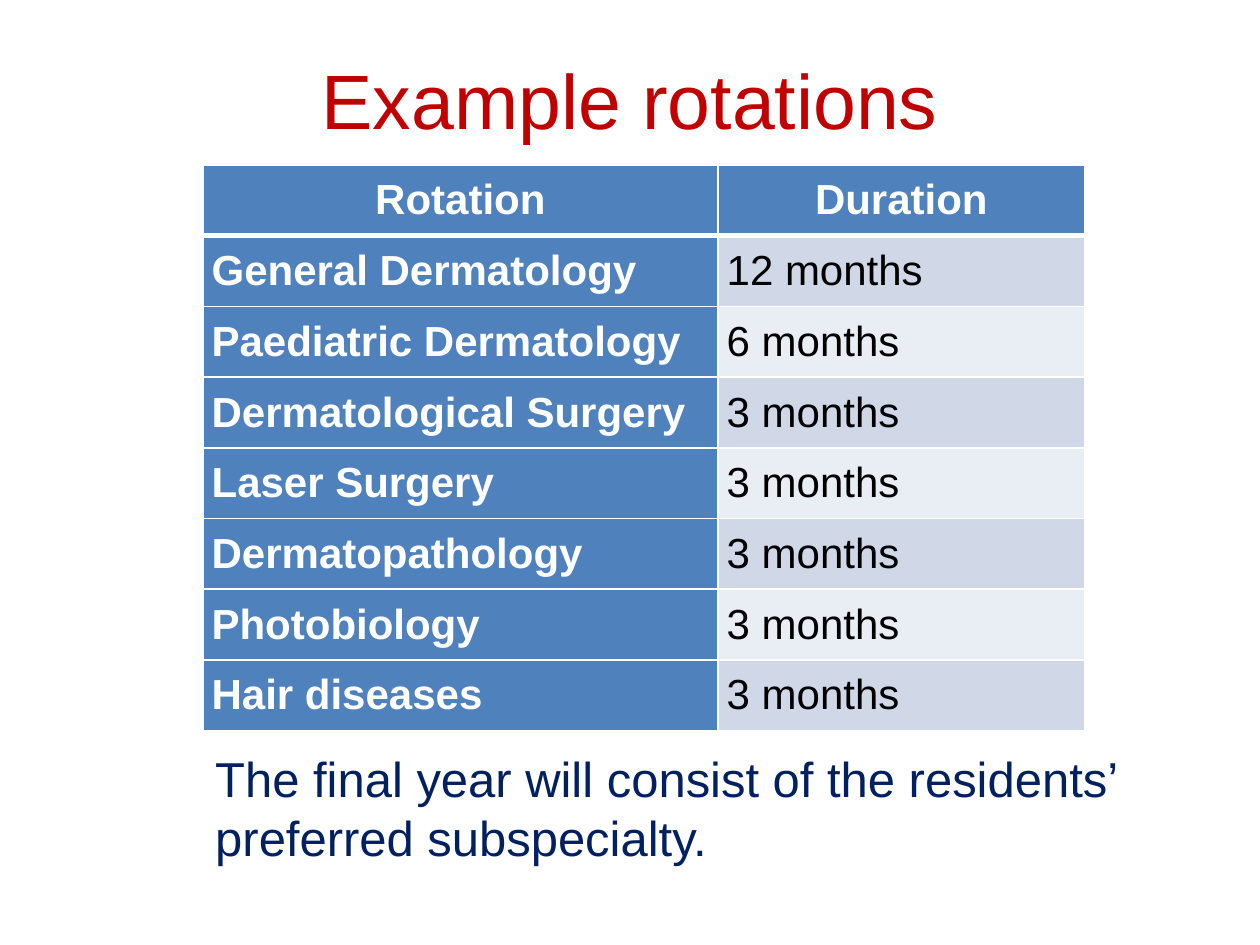
from lxml.etree import SubElement
from pptx import Presentation
from pptx.dml.color import RGBColor
from pptx.enum.text import MSO_ANCHOR as Anchor, MSO_AUTO_SIZE as AutoSize, PP_ALIGN as Align
from pptx.oxml.ns import qn
from pptx.util import Inches, Pt

WHITE = RGBColor(0xFF, 0xFF, 0xFF)
BLACK = RGBColor(0x00, 0x00, 0x00)
RED = RGBColor(0xC0, 0x00, 0x00)
NAVY = RGBColor(0x00, 0x20, 0x60)
BLUE = RGBColor(0x4F, 0x81, 0xBD)
BANDS = (RGBColor(0xD0, 0xD8, 0xE8), RGBColor(0xE9, 0xED, 0xF4))

TITLE_BOX = (0.5, 0.3, 9, 0.77)
TABLE_BOX = (1.61, 1.31, 7, 4.49)
NOTE_BOX = (1.61, 5.89, 8.19, 1.04)
COLUMN_SHARES = (0.584, 0.416)
ROTATIONS = (
    ("Rotation", "Duration"),
    ("General Dermatology", "12 months"),
    ("Paediatric Dermatology", "6 months"),
    ("Dermatological Surgery", "3 months"),
    ("Laser Surgery", "3 months"),
    ("Dermatopathology", "3 months"),
    ("Photobiology", "3 months"),
    ("Hair diseases", "3 months"),
)


def set_all(target, values):
    """Set each named attribute of the target."""
    for name, value in values.items():
        setattr(target, name, value)


def write_text(frame, text, size, color, bold=False, align=Align.LEFT):
    """Write one formatted paragraph into a text frame."""
    para = frame.paragraphs[0]
    para.alignment = align
    span = para.add_run()
    span.text = text
    set_all(span.font, {"name": "Arial", "size": Pt(size), "bold": bold})
    span.font.color.rgb = color


def set_borders(cell, widths):
    """Draw white cell borders with the given widths in points."""
    properties = cell._tc.get_or_add_tcPr()
    for side, width in widths.items():
        line = SubElement(properties, qn(f"a:ln{side}"), w=str(Pt(width)))
        fill = SubElement(line, qn("a:solidFill"))
        SubElement(fill, qn("a:srgbClr"), val=str(WHITE))


def add_title(page, box):
    """Place the slide title in its box."""
    title = page.shapes.title
    set_all(title, dict(zip(("left", "top", "width", "height"), map(Inches, box))))
    set_all(title.text_frame, {
        "vertical_anchor": Anchor.TOP, "auto_size": AutoSize.NONE,
        "margin_top": Inches(0.12), "margin_bottom": 0,
    })
    write_text(title.text_frame, "Example rotations", 44, RED, align=Align.CENTER)


def format_cell(cell, text, row, column):
    """Write and colour one table cell by its place in the grid."""
    is_header = row == 0
    is_label = is_header or column == 0
    set_all(cell, {
        "vertical_anchor": Anchor.MIDDLE,
        "margin_left": Inches(0.07), "margin_right": Inches(0.07),
        "margin_top": 0, "margin_bottom": 0,
    })
    set_borders(cell, {"L": 1, "R": 1, "T": 3 if row == 1 else 1, "B": 3 if is_header else 1})
    cell.fill.solid()
    cell.fill.fore_color.rgb = BLUE if is_label else BANDS[(row - 1) % 2]
    write_text(cell.text_frame, text, 24, WHITE if is_label else BLACK, is_label,
               Align.CENTER if is_header else Align.LEFT)


def add_rotation_table(page, box):
    """Place the table of rotations with equal rows in its box."""
    left, top, width, height = map(Inches, box)
    frame = page.shapes.add_table(len(ROTATIONS), len(COLUMN_SHARES), left, top, width, height)
    table = frame.table
    table.first_col = True
    for column, share in zip(table.columns, COLUMN_SHARES):
        column.width = int(width * share)
    for row, texts in enumerate(ROTATIONS):
        for column, text in enumerate(texts):
            format_cell(table.cell(row, column), text, row, column)


def add_note(page, box):
    """Place the closing note below the table."""
    note = page.shapes.add_textbox(*map(Inches, box))
    set_all(note.text_frame, {
        "word_wrap": True, "vertical_anchor": Anchor.MIDDLE,
        "auto_size": AutoSize.SHAPE_TO_FIT_TEXT,
    })
    write_text(note.text_frame,
               "The final year will consist of the residents’ preferred subspecialty.", 28, NAVY)


def main():
    """Build and save the slide."""
    deck = Presentation()
    set_all(deck, {"slide_width": Inches(10), "slide_height": Inches(7.5)})
    page = deck.slides.add_slide(deck.slide_layouts[5])
    add_title(page, TITLE_BOX)
    add_rotation_table(page, TABLE_BOX)
    add_note(page, NOTE_BOX)
    deck.save("out.pptx")


if __name__ == "__main__":
    main()
